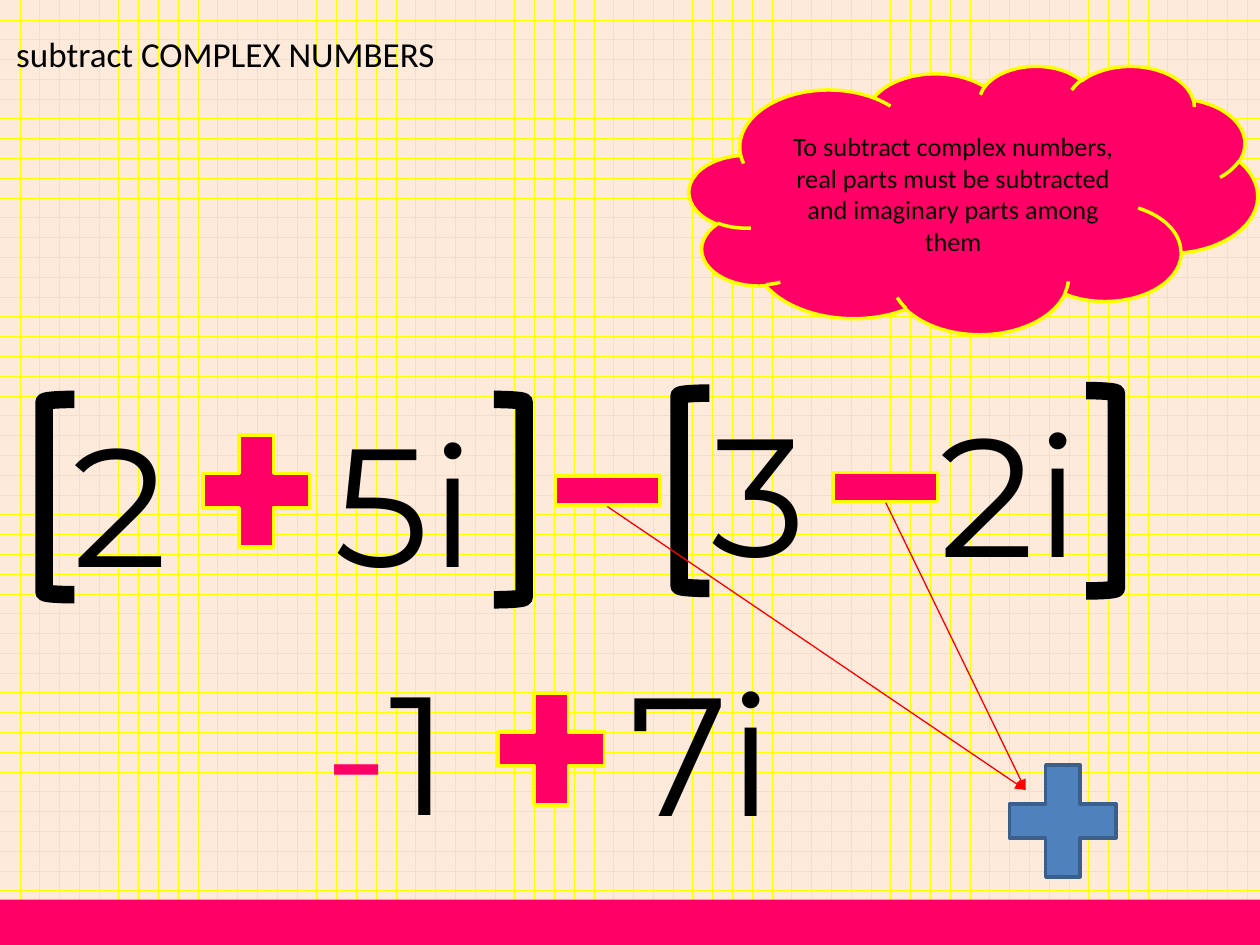
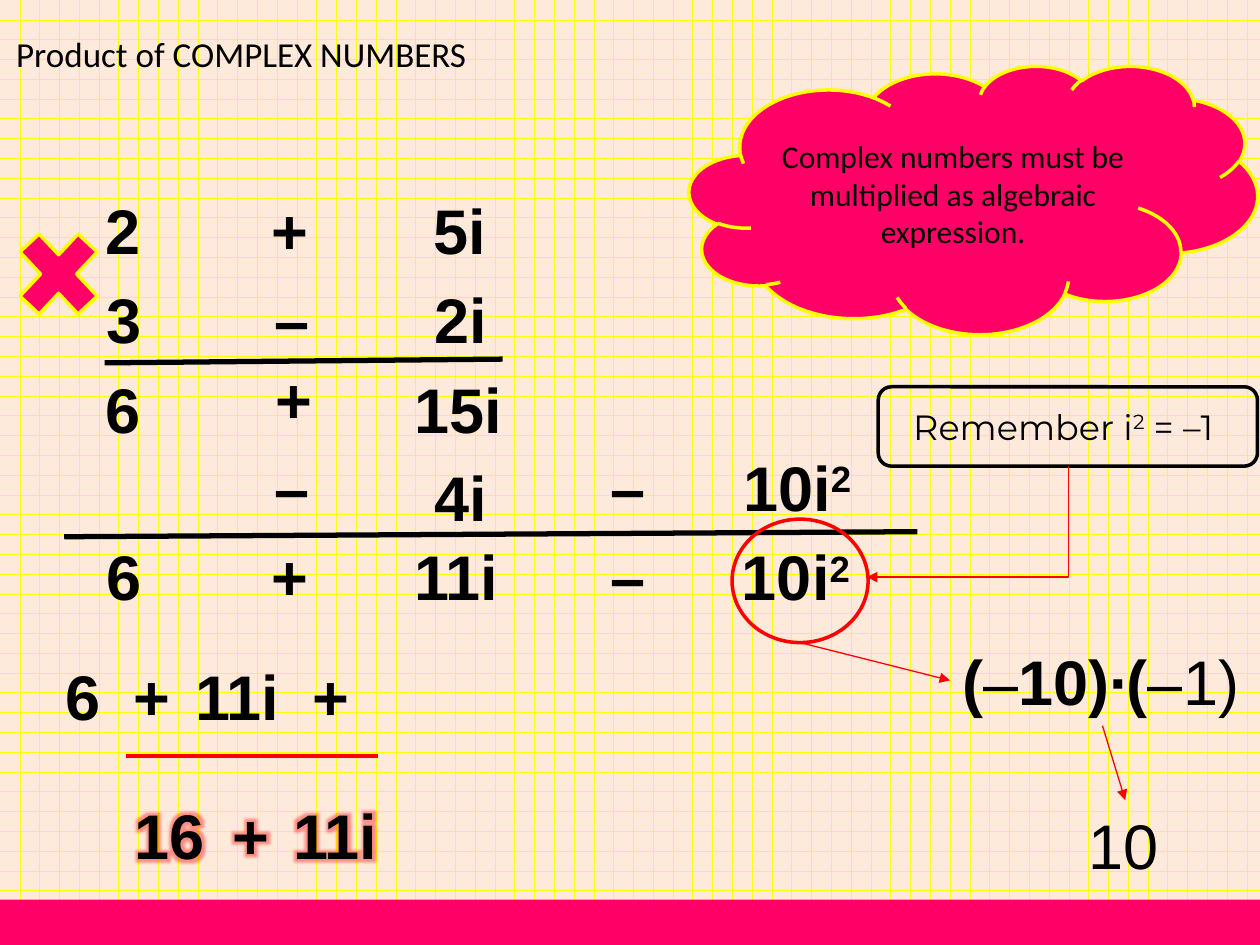
from lxml import etree
from pptx import Presentation
from pptx.dml.color import RGBColor
from pptx.enum import dml, shapes, text
from pptx.oxml.ns import qn
from pptx.util import Inches, Pt

PINK, YELLOW, BLACK, RED = "FF0066", "FFFF00", "000000", "FF0000"
CREAM, BLUE, NAVY = "FDEADA", "4F81BD", "3A5F8C"
SHAPE = shapes.MSO_SHAPE
GLYPH_WIDTHS = {"i": 0.14, "+": 0.3, "²": 0.19}


def color(value):
    return RGBColor.from_string(value)


def add_color(parent, value, alpha=None):
    node = etree.SubElement(parent, qn("a:srgbClr"), val=value)
    if alpha:
        etree.SubElement(node, qn("a:alpha"), val=str(alpha * 1000))


def bezier(start, first, second, end, steps=16):
    for step in range(1, steps + 1):
        t = step / steps
        s = 1 - t
        yield tuple(s**3 * a + 3 * s * s * t * b + 3 * s * t * t * c + t**3 * d
                    for a, b, c, d in zip(start, first, second, end))


class Lesson:
    def __init__(self):
        self.deck = Presentation()
        self.deck.slide_width, self.deck.slide_height = Inches(10), Inches(7.5)
        self.page = None

    def start(self, title, rule, rule_size):
        self.page = self.deck.slides.add_slide(self.deck.slide_layouts[6])
        fill = self.page.background.fill
        fill.patterned()
        fill.pattern = dml.MSO_PATTERN.DOTTED_GRID
        fill.fore_color.rgb, fill.back_color.rgb = color(YELLOW), color(CREAM)
        self.label(0.03, 0.21, 6.39, 0.44, [title], 20, "Calibri", wrap=True)
        cloud = self.shape(SHAPE.CLOUD, 5.47, 0.52, 4.51, 2.13)
        self.fill_text(cloud, [rule], rule_size, "Calibri", centered=True)

    def band(self):
        self.shape(SHAPE.RECTANGLE, 0, 7.14, 10, 0.36, line=None)

    def fill_text(self, box, spans, size, font, bold=False, centered=False):
        para = box.text_frame.paragraphs[0]
        para.alignment = text.PP_ALIGN.CENTER if centered else text.PP_ALIGN.LEFT
        para.font.size, para.font.name, para.font.bold = Pt(size), font, bold
        para.font.color.rgb = color(BLACK)
        for item in spans:
            words, style = item if isinstance(item, tuple) else (item, {})
            span = para.add_run()
            span.text = words
            self.style(span, **style)

    def style(self, span, bold=None, raised=False, ink=None, outline=None, glow=None):
        span.font.bold = bold
        if ink:
            span.font.color.rgb = color(ink)
        props = span.font._element
        if raised:
            props.set("baseline", "30000")
        if outline:
            border = etree.Element(qn("a:ln"), w=str(Pt(0.75)))
            add_color(etree.SubElement(border, qn("a:solidFill")), outline)
            props.insert(0, border)
        if glow:
            effects = etree.SubElement(props, qn("a:effectLst"))
            halo = etree.SubElement(effects, qn("a:glow"), rad=str(Pt(8)))
            add_color(halo, glow, 40)

    def label(self, left, top, width, height, spans, size, font, bold=False, wrap=False):
        box = self.page.shapes.add_textbox(*map(Inches, (left, top, width, height)))
        box.text_frame.word_wrap = wrap
        box.text_frame.auto_size = text.MSO_AUTO_SIZE.SHAPE_TO_FIT_TEXT
        self.fill_text(box, spans, size, font, bold)

    def big(self, left, top, spans, width=1.55):
        self.label(left, top, width, 1.72, spans, 96, "Montserrat")

    def term(self, left, top, symbols, bold=True, glow=None):
        width = 0.2 + sum(GLYPH_WIDTHS.get(symbol, 0.28) for symbol in symbols)
        base = symbols.rstrip("²")
        spans = [(base, {"glow": glow})]
        if base != symbols:
            spans.append(("2", {"raised": True}))
        self.label(left, top, width, 0.71, spans, 36, "Arial", bold)

    def paint(self, shape, fill, line, weight):
        shape.shadow.inherit = False
        if fill:
            shape.fill.solid()
            shape.fill.fore_color.rgb = color(fill)
        else:
            shape.fill.background()
        if line:
            shape.line.color.rgb, shape.line.width = color(line), Pt(weight)
        else:
            shape.line.fill.background()

    def shape(self, kind, left, top, width, height, fill=PINK, line=YELLOW, weight=2):
        shape = self.page.shapes.add_shape(kind, *map(Inches, (left, top, width, height)))
        self.paint(shape, fill, line, weight)
        return shape

    def bracket(self, kind, left, top, height):
        self.shape(kind, left, top, 0.24, height, None, BLACK, 10)

    def plus(self, left, top, fill=PINK, line=YELLOW):
        self.shape(SHAPE.MATH_PLUS, left, top, 1.15, 1.21, fill, line)

    def minus(self, left, top):
        self.shape(SHAPE.FLOWCHART_PROCESS, left, top, 0.83, 0.23)

    def line(self, start, end, ink=BLACK, weight=3, arrow=False):
        line = self.page.shapes.add_connector(
            shapes.MSO_CONNECTOR.STRAIGHT, *map(Inches, (*start, *end)))
        line.line.color.rgb, line.line.width = color(ink), Pt(weight)
        props = line._element.spPr
        if arrow:
            etree.SubElement(props.find(qn("a:ln")), qn("a:tailEnd"), type="triangle")
        etree.SubElement(props, qn("a:effectLst"))
        return line

    def arrow(self, start, end):
        return self.line(start, end, RED, 0.75, True)

    def down_then_left(self, start, end):
        mid_x, mid_y = (start[0] + end[0]) / 2, (start[1] + end[1]) / 2
        half_x, half_y = (start[0] - end[0]) / 2, (end[1] - start[1]) / 2
        bend = self.arrow((mid_x - half_y, mid_y - half_x), (mid_x + half_y, mid_y + half_x))
        props = bend._element.spPr
        props.find(qn("a:prstGeom")).set("prst", "bentConnector2")
        props.find(qn("a:xfrm")).set("rot", "5400000")

    def curve(self, start, *segments):
        points = []
        here = start
        for segment in segments:
            points.extend(bezier(here, *segment))
            here = segment[-1]
        builder = self.page.shapes.build_freeform(*start, scale=Inches(1))
        builder.add_line_segments(points, close=False)
        self.paint(builder.convert_to_shape(), None, RED, 2)


def subtraction(lesson):
    lesson.start("subtract COMPLEX NUMBERS",
                 "To subtract complex numbers, real parts must be subtracted "
                 "and imaginary parts among them", 15)
    for kind, left, top, height in (
            (SHAPE.LEFT_BRACKET, 0.35, 3.17, 1.55), (SHAPE.RIGHT_BRACKET, 3.92, 3.17, 1.59),
            (SHAPE.LEFT_BRACKET, 5.39, 3.12, 1.55), (SHAPE.RIGHT_BRACKET, 8.62, 3.1, 1.59)):
        lesson.bracket(kind, left, top, height)
    lesson.big(0.48, 3.12, ["2"], 1.1)
    lesson.big(2.56, 3.12, ["5i"])
    lesson.big(5.55, 3.04, ["3"], 1.1)
    lesson.big(7.36, 3.04, ["2i"])
    lesson.big(2.48, 5.09, [("-", {"ink": PINK, "outline": YELLOW}), "1"])
    lesson.big(4.9, 5.1, ["7i"])
    lesson.plus(1.46, 3.29)
    lesson.plus(3.8, 5.34)
    lesson.minus(6.61, 3.75)
    lesson.minus(4.41, 3.78)
    for start in ((4.82, 4.02), (7.03, 3.99)):
        lesson.arrow(start, (8.14, 6.27))
    lesson.plus(7.86, 5.91, BLUE, NAVY)
    lesson.band()


def product(lesson):
    lesson.start("Product of COMPLEX NUMBERS",
                 "Complex numbers must be multiplied as algebraic expression.", 18)
    reminder = lesson.shape(SHAPE.ROUNDED_RECTANGLE, 6.97, 3.07, 3.01, 0.63, None, BLACK)
    lesson.fill_text(reminder, ["Remember i", ("2", {"raised": True}), " = –1 "],
                     20, "Montserrat", centered=True)
    rows = {
        1.47: ((0.74, "2"), (2.06, "+"), (3.34, "5i")),
        2.18: ((0.75, "3"), (2.08, "–"), (3.35, "2i")),
        2.81: ((2.09, "+"),),
        2.89: ((0.74, "6"), (3.19, "15i")),
        3.51: ((2.08, "–"), (4.75, "–"), (5.8, "10i²")),
        3.59: ((3.35, "4i"),),
        4.22: ((0.75, "6"), (2.06, "+"), (3.19, "11i"), (4.75, "–"), (5.79, "10i²")),
        5.17: ((0.42, "6"), (0.96, "+"), (1.45, "11i"), (2.38, "+")),
    }
    for top, terms in rows.items():
        for left, symbols in terms:
            lesson.term(left, top, symbols)
    for left, symbols in ((0.97, "16"), (1.75, "+"), (2.23, "11i")):
        lesson.term(left, 6.27, symbols, glow=RED)
    lesson.line((0.83, 2.88), (3.99, 2.85))
    lesson.line((0.51, 4.26), (7.28, 4.22))
    lesson.down_then_left((8.48, 3.7), (6.88, 4.58))
    lesson.shape(SHAPE.OVAL, 5.81, 4.12, 1.08, 0.98, None, RED)
    plain = {"bold": False}
    lesson.label(7.54, 5.05, 2.42, 0.71, ["(", ("–", plain), "10)∙(", ("–1)", plain)],
                 36, "Arial", True)
    lesson.arrow((6.35, 5.1), (7.54, 5.4))
    lesson.term(8.54, 6.35, "10", bold=False)
    lesson.arrow((8.75, 5.76), (8.93, 6.35))
    lesson.curve((0.62, 5.73), ((1.04, 5.88), (1.46, 6.03), (1.87, 6.02)),
                 ((2.29, 6.01), (3.1, 5.67), (3.1, 5.67)))
    lesson.shape(SHAPE.MATH_MULTIPLY, 0.02, 1.7, 0.89, 0.95)
    lesson.band()


def main():
    lesson = Lesson()
    subtraction(lesson)
    product(lesson)
    lesson.deck.save("out.pptx")


if __name__ == "__main__":
    main()
